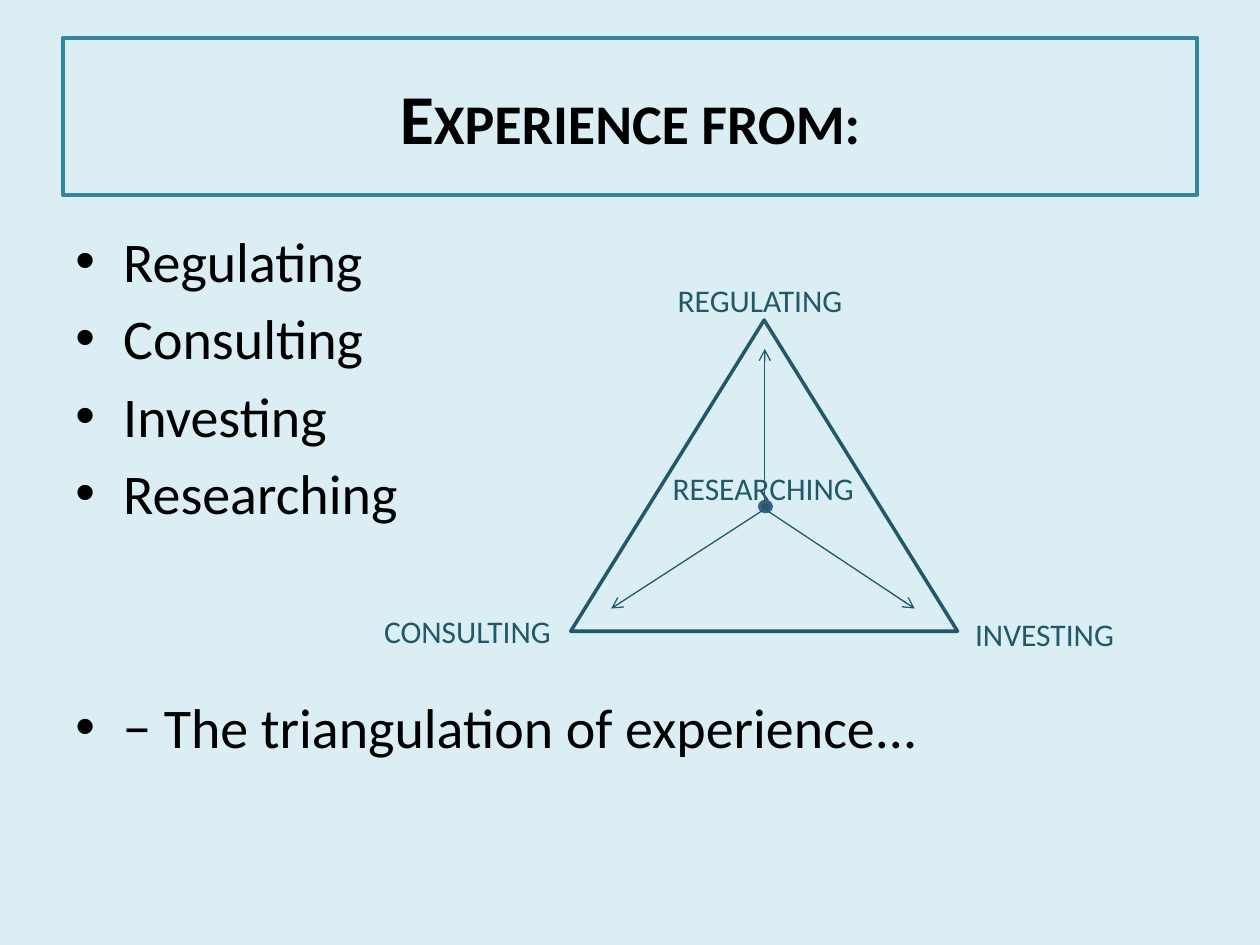
import pptx
import pptx.util
import pptx.dml.color
import pptx.enum.shapes
import pptx.enum.text
import pptx.oxml.ns
from lxml import etree

WIDTH, HEIGHT = 10, 7.5
FONT = "Calibri"
PALE, TEAL, DARK, DOT_EDGE, BLACK = "DBEEF4", "31859C", "215968", "3A5F8C", "000000"

# Content: text, and the number of empty lines to leave above it
TITLE = "Experience from:"
BULLETS = [
    ("Regulating", 0),
    ("Consulting", 0),
    ("Investing", 0),
    ("Researching", 0),
    ("− The triangulation of experience...", 2),
]
LABELS = [  # text, left, top, width
    ("REGULATING", 5.28, 2.18, 1.58),
    ("CONSULTING", 2.95, 4.81, 1.58),
    ("INVESTING", 7.64, 4.83, 1.58),
    ("RESEARCHING", 5.24, 3.67, 1.66),
]
TRIANGLE = (4.53, 2.54, 3.07, 2.47)
DOT = (6.03, 3.98, 0.09, 0.08)
HUB_X = 6.07
ARROWS = [  # start height, tip
    (3.99, (HUB_X, 2.77)),
    (4.04, (7.26, 4.83)),
    (4.04, (4.85, 4.83)),
]
MARGIN = WIDTH * 0.05
LINE_PITCH, BULLET_GAP = 44.8, 5.7  # points
INDENT = 0.38

SHAPE = pptx.enum.shapes.MSO_SHAPE
ALIGN = pptx.enum.text.PP_ALIGN
ANCHOR = pptx.enum.text.MSO_ANCHOR


def inches(*values):
    return [pptx.util.Inches(value) for value in values]


def colour(hex_string):
    return pptx.dml.color.RGBColor.from_string(hex_string)


def child(parent, tag, **attributes):
    return etree.SubElement(parent, pptx.oxml.ns.qn(tag), attributes)


def write(paragraph, text, size=18, color=BLACK, bold=False, small_caps=False,
          align=ALIGN.LEFT, before=0, bullet=None):
    run = paragraph.add_run()
    run.text = text
    run.font.name, run.font.size, run.font.bold = FONT, pptx.util.Pt(size), bold
    run.font.color.rgb = colour(color)
    if small_caps:
        run.font._element.set("cap", "small")
    paragraph.alignment = align
    paragraph.space_before = pptx.util.Pt(before)
    if bullet:
        properties = paragraph._p.get_or_add_pPr()
        indent = pptx.util.Inches(INDENT)
        properties.set("marL", str(indent))
        properties.set("indent", str(-indent))
        child(properties, "a:buFont", typeface="Arial")
        child(properties, "a:buChar", char=bullet)


def add_outline(shapes, preset, box, fill, line):
    shape = shapes.add_shape(preset, *inches(*box))
    shape.shadow.inherit = False
    if fill:
        shape.fill.solid()
        shape.fill.fore_color.rgb = colour(fill)
    else:
        shape.fill.background()
    shape.line.color.rgb = colour(line)
    shape.line.width = pptx.util.Pt(2)
    return shape


def add_textbox(shapes, box):
    frame = shapes.add_textbox(*inches(*box)).text_frame
    frame.word_wrap = True
    return frame


def add_arrow(shapes, start, tip):
    arrow = shapes.add_connector(pptx.enum.shapes.MSO_CONNECTOR.STRAIGHT,
                                 *inches(*start, *tip))
    arrow.line.color.rgb = colour(DARK)
    arrow.line.width = pptx.util.Pt(0.75)
    child(arrow.line._get_or_add_ln(), "a:tailEnd", type="arrow")
    child(arrow._element.spPr, "a:effectLst")


def main():
    deck = pptx.Presentation()
    deck.slide_width, deck.slide_height = inches(WIDTH, HEIGHT)
    slide = deck.slides.add_slide(deck.slide_layouts[6])
    slide.background.fill.solid()
    slide.background.fill.fore_color.rgb = colour(PALE)

    # Title frame
    title = add_outline(slide.shapes, SHAPE.RECTANGLE,
                        (MARGIN, 0.3, WIDTH - 2 * MARGIN, 1.25), None, TEAL)
    title.text_frame.word_wrap = True
    title.text_frame.vertical_anchor = ANCHOR.MIDDLE
    write(title.text_frame.paragraphs[0], TITLE, size=40, bold=True,
          small_caps=True, align=ALIGN.CENTER)

    # Bullet list
    body = add_textbox(slide.shapes, (MARGIN, 1.75, WIDTH - 2 * MARGIN, 4.95))
    for index, (text, skipped) in enumerate(BULLETS):
        paragraph = body.add_paragraph() if index else body.paragraphs[0]
        write(paragraph, text, size=32, bullet="•",
              before=BULLET_GAP + skipped * LINE_PITCH)

    # Triangle with arrows from its hub
    diagram = slide.shapes.add_group_shape().shapes
    add_outline(diagram, SHAPE.ISOSCELES_TRIANGLE, TRIANGLE, PALE, DARK)
    add_outline(diagram, SHAPE.FLOWCHART_CONNECTOR, DOT, DARK, DOT_EDGE)
    for start_y, tip in ARROWS:
        add_arrow(diagram, (HUB_X, start_y), tip)

    # Corner and hub labels
    for text, left, top, width in LABELS:
        label = add_textbox(slide.shapes, (left, top, width, 0.4))
        label.auto_size = pptx.enum.text.MSO_AUTO_SIZE.SHAPE_TO_FIT_TEXT
        write(label.paragraphs[0], text, color=DARK)

    deck.save("out.pptx")


if __name__ == "__main__":
    main()
